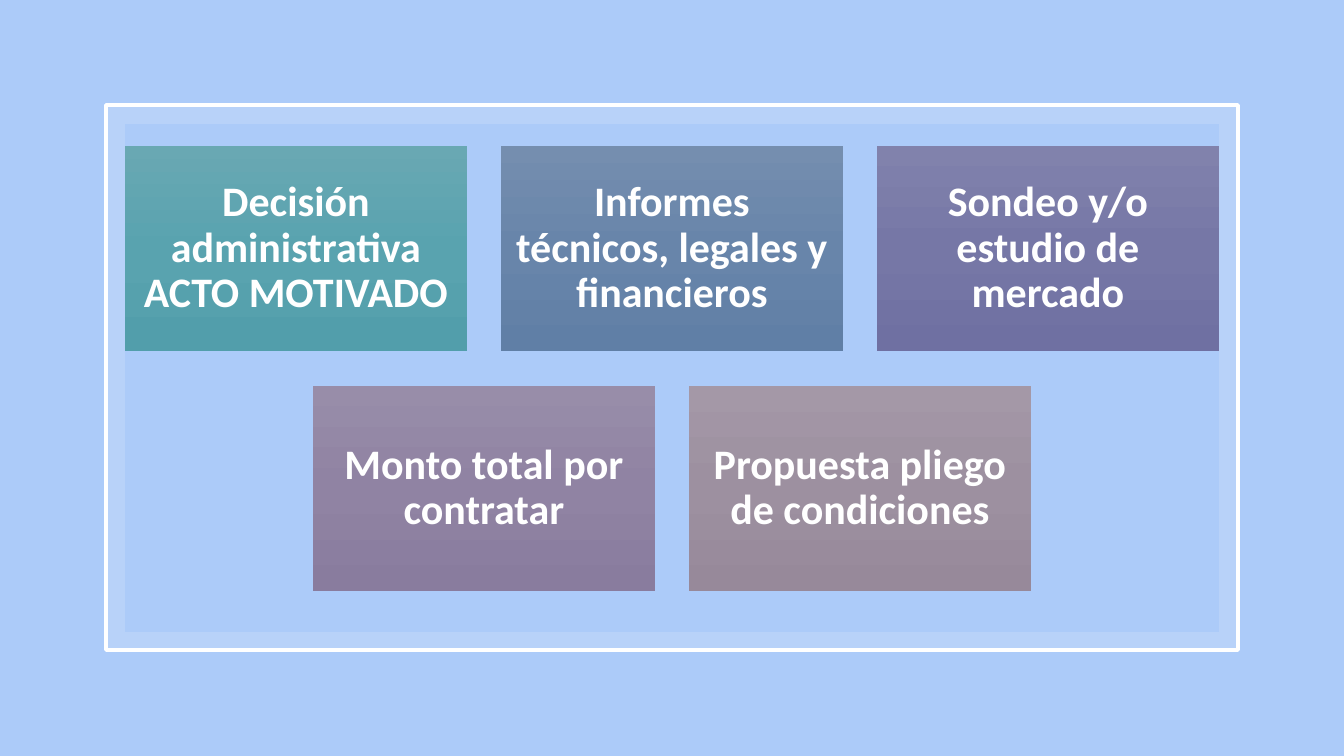
from copy import deepcopy

from pptx import Presentation
from pptx.dml.color import RGBColor
from pptx.enum.shapes import MSO_SHAPE
from pptx.enum.text import MSO_ANCHOR, PP_ALIGN
from pptx.oxml.ns import qn
from pptx.oxml.xmlchemy import OxmlElement
from pptx.util import Emu, Pt

SLIDE_WIDTH, SLIDE_HEIGHT = 1344, 756
EMU_PER_PX = 914400 / 100.8

WHITE = RGBColor(0xFF, 0xFF, 0xFF)
SKY = RGBColor(0xAC, 0xCB, 0xF9)
TEAL = (RGBColor(0x69, 0xA8, 0xB3), RGBColor(0x59, 0xA3, 0xAF), RGBColor(0x52, 0x9E, 0xAB))
BLUE = (RGBColor(0x75, 0x8E, 0xAF), RGBColor(0x68, 0x85, 0xAA), RGBColor(0x60, 0x7F, 0xA6))
INDIGO = (RGBColor(0x81, 0x82, 0xAC), RGBColor(0x76, 0x77, 0xA6), RGBColor(0x6F, 0x70, 0xA2))
PURPLE = (RGBColor(0x98, 0x8D, 0xA9), RGBColor(0x90, 0x83, 0xA3), RGBColor(0x89, 0x7C, 0x9E))
MAUVE = (RGBColor(0xA4, 0x98, 0xA7), RGBColor(0x9D, 0x90, 0xA0), RGBColor(0x97, 0x89, 0x9A))

CARD_WIDTH, CARD_HEIGHT = 342, 205
CARD_GAP = 34
FIRST_ROW_TOP = 146
ROW_PITCH = 240
CARD_ROWS = [
    [
        ("Decisión administrativa ACTO MOTIVADO", TEAL),
        ("Informes técnicos, legales y financieros", BLUE),
        ("Sondeo y/o estudio de mercado", INDIGO),
    ],
    [
        ("Monto total por contratar", PURPLE),
        ("Propuesta pliego de condiciones", MAUVE),
    ],
]


def px(length):
    return Emu(round(length * EMU_PER_PX))


class SlideBuilder:
    font_name = "Calibri"
    font_size = Pt(30)
    inset = 12

    def __init__(self, presentation):
        self.slide = presentation.slides.add_slide(presentation.slide_layouts[6])

    def background(self, color):
        fill = self.slide.background.fill
        fill.solid()
        fill.fore_color.rgb = color

    def rectangle(self, left, top, width, height):
        shape = self.slide.shapes.add_shape(
            MSO_SHAPE.RECTANGLE, px(left), px(top), px(width), px(height)
        )
        shape.shadow.inherit = False
        shape.line.fill.background()
        return shape

    def panel(self, left, top, width, height, color):
        shape = self.rectangle(left, top, width, height)
        shape.fill.solid()
        shape.fill.fore_color.rgb = color
        return shape

    def frame(self, left, top, width, height, color, opacity, line_width):
        shape = self.panel(left, top, width, height, color)
        alpha = OxmlElement("a:alpha")
        alpha.set("val", str(opacity * 1000))
        shape.fill._xPr.find(qn("a:solidFill"))[0].append(alpha)
        shape.line.color.rgb = color
        shape.line.width = Pt(line_width)

    def card(self, left, top, text, colors):
        shape = self.rectangle(left, top, CARD_WIDTH, CARD_HEIGHT)
        self.gradient(shape, colors)
        text_frame = shape.text_frame
        text_frame.word_wrap = True
        text_frame.vertical_anchor = MSO_ANCHOR.MIDDLE
        text_frame.margin_left = text_frame.margin_right = px(self.inset)
        text_frame.margin_top = text_frame.margin_bottom = px(self.inset)
        paragraph = text_frame.paragraphs[0]
        paragraph.alignment = PP_ALIGN.CENTER
        paragraph.line_spacing = 0.9
        run = paragraph.add_run()
        run.text = text
        run.font.name = self.font_name
        run.font.size = self.font_size
        run.font.bold = True
        run.font.color.rgb = WHITE

    def gradient(self, shape, colors):
        shape.fill.gradient()
        shape.fill.gradient_angle = 270
        stop_list = shape._element.spPr.find(qn("a:gradFill")).find(qn("a:gsLst"))
        stop_list.insert(1, deepcopy(stop_list[0]))
        for stop, color, position in zip(shape.fill.gradient_stops, colors, (0, 0.5, 1)):
            stop.color.rgb = color
            stop.position = position


def main():
    presentation = Presentation()
    presentation.slide_width = px(SLIDE_WIDTH)
    presentation.slide_height = px(SLIDE_HEIGHT)

    builder = SlideBuilder(presentation)
    builder.background(SKY)
    builder.frame(106, 105, 1132, 545, WHITE, 15, 2.5)
    builder.panel(125, 124, 1094, 508, SKY)

    for row_index, row in enumerate(CARD_ROWS):
        row_width = len(row) * (CARD_WIDTH + CARD_GAP) - CARD_GAP
        row_left = (SLIDE_WIDTH - row_width) // 2
        top = FIRST_ROW_TOP + row_index * ROW_PITCH
        for column, (text, colors) in enumerate(row):
            left = row_left + column * (CARD_WIDTH + CARD_GAP)
            builder.card(left, top, text, colors)

    presentation.save("out.pptx")


if __name__ == "__main__":
    main()
